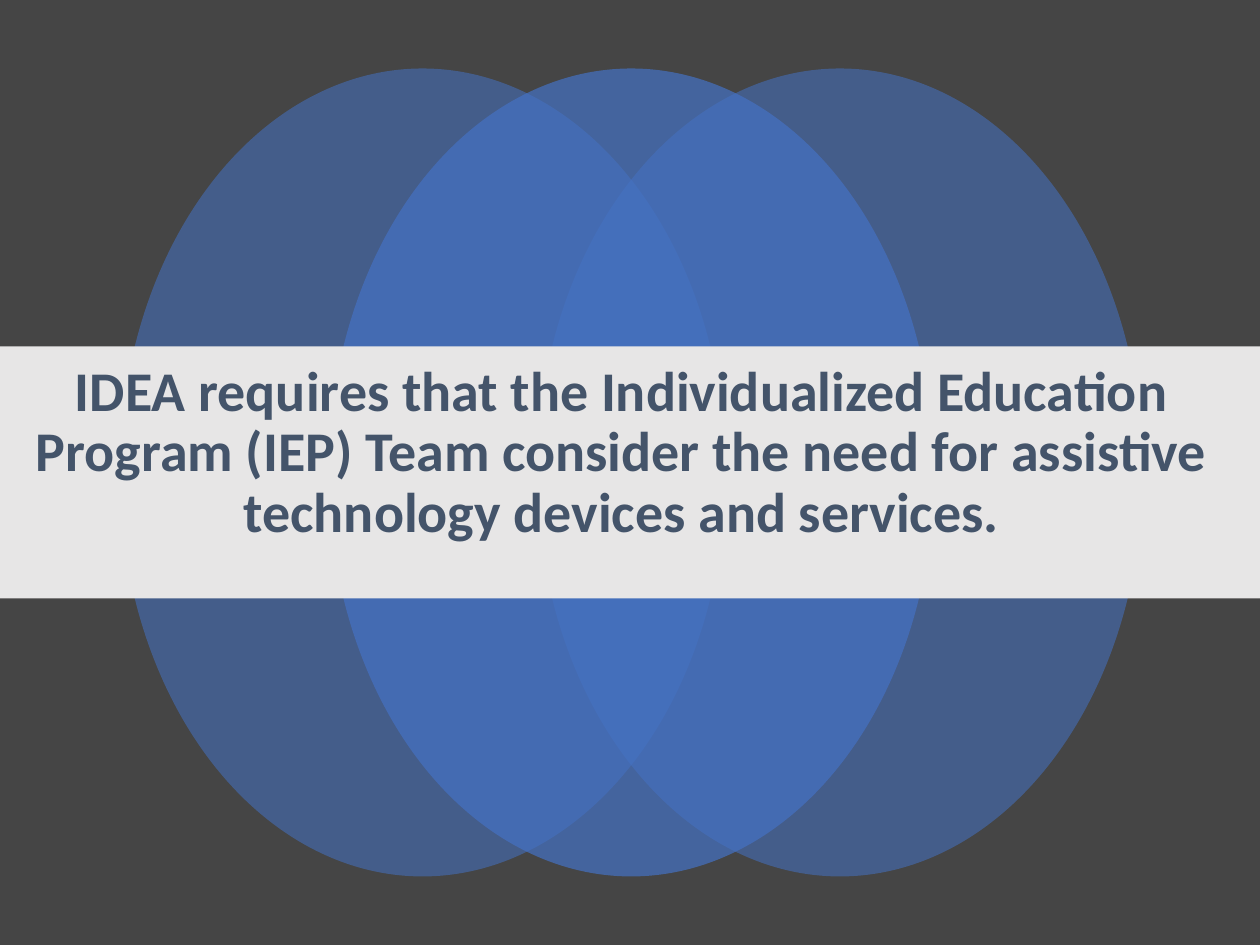
from lxml import etree
from pptx import Presentation
from pptx import util as u
from pptx.dml.color import RGBColor
from pptx.enum import shapes, text
from pptx.oxml import ns

DARK_GREY = RGBColor(0x45, 0x45, 0x45)
BLUE = RGBColor(0x44, 0x72, 0xC4)
PALE_GREY = RGBColor(0xE7, 0xE6, 0xE6)
SLATE = RGBColor(0x44, 0x54, 0x6A)

WIDTH, HEIGHT = 10, 7.5
STATEMENT = (
    "IDEA requires that the Individualized Education Program (IEP) Team "
    "consider the need for assistive technology devices and services."
)


def apply(target, formats):
    for name, value in formats.items():
        setattr(target, name, value)


def add_plain(parent, preset, box, color, opacity=100):
    """Add a flat shape without outline; box is in inches, opacity in percent."""
    shape = parent.add_shape(preset, *map(u.Inches, box))
    shape.shadow.inherit = False
    shape.line.fill.background()
    shape.fill.solid()
    shape.fill.fore_color.rgb = color
    if opacity < 100:
        tint = shape.fill._xPr.find(ns.qn("a:solidFill"))[0]
        etree.SubElement(tint, ns.qn("a:alpha"), val=str(opacity * 1000))


def add_overlapping_ellipses(slide, box):
    """Spread three ellipses evenly over the box, the middle one in front."""
    left, top, width, height = box
    ellipse_width = 0.592 * width
    step = (width - ellipse_width) / 2
    group = slide.shapes.add_group_shape()
    for column, opacity in ((0, 55), (2, 55), (1, 70)):
        place = (left + column * step, top, ellipse_width, height)
        add_plain(group.shapes, shapes.MSO_SHAPE.OVAL, place, BLUE, opacity)


def add_statement_band(slide, box):
    """Draw the band and lay the title over it."""
    left, top, width, height = box
    add_plain(slide.shapes, shapes.MSO_SHAPE.RECTANGLE, box, PALE_GREY)

    title = slide.shapes.title
    slide.shapes._spTree.append(title._element)
    apply(title, {
        "left": u.Inches(left + 0.013 * width),
        "top": u.Inches(top + 0.145 * height),
        "width": u.Inches(0.961 * width),
        "height": u.Inches(0.8 * height),
    })
    frame = title.text_frame
    frame.text = STATEMENT
    apply(frame, {
        "word_wrap": True,
        "auto_size": text.MSO_AUTO_SIZE.NONE,
        "vertical_anchor": text.MSO_ANCHOR.MIDDLE,
        "margin_top": 0,
        "margin_bottom": u.Inches(0.24 * height),
    })
    paragraph = frame.paragraphs[0]
    apply(paragraph, {
        "alignment": text.PP_ALIGN.CENTER,
        "line_spacing": 0.9,
        "space_before": u.Pt(0),
    })
    font = paragraph.runs[0].font
    apply(font, {"name": "Calibri", "size": u.Pt(32), "bold": True})
    font.color.rgb = SLATE


def main():
    deck = Presentation()
    apply(deck, {"slide_width": u.Inches(WIDTH), "slide_height": u.Inches(HEIGHT)})
    slide = deck.slides.add_slide(deck.slide_layouts.get_by_name("Title Only"))
    background = slide.background.fill
    background.solid()
    background.fore_color.rgb = DARK_GREY

    ellipses_height = 0.855 * HEIGHT
    ellipses_top = (HEIGHT - ellipses_height) / 2
    add_overlapping_ellipses(
        slide, (0.095 * WIDTH, ellipses_top, 0.812 * WIDTH, ellipses_height))
    band_height = 2
    add_statement_band(slide, (0, (HEIGHT - band_height) / 2, WIDTH, band_height))
    deck.save("out.pptx")


if __name__ == "__main__":
    main()
